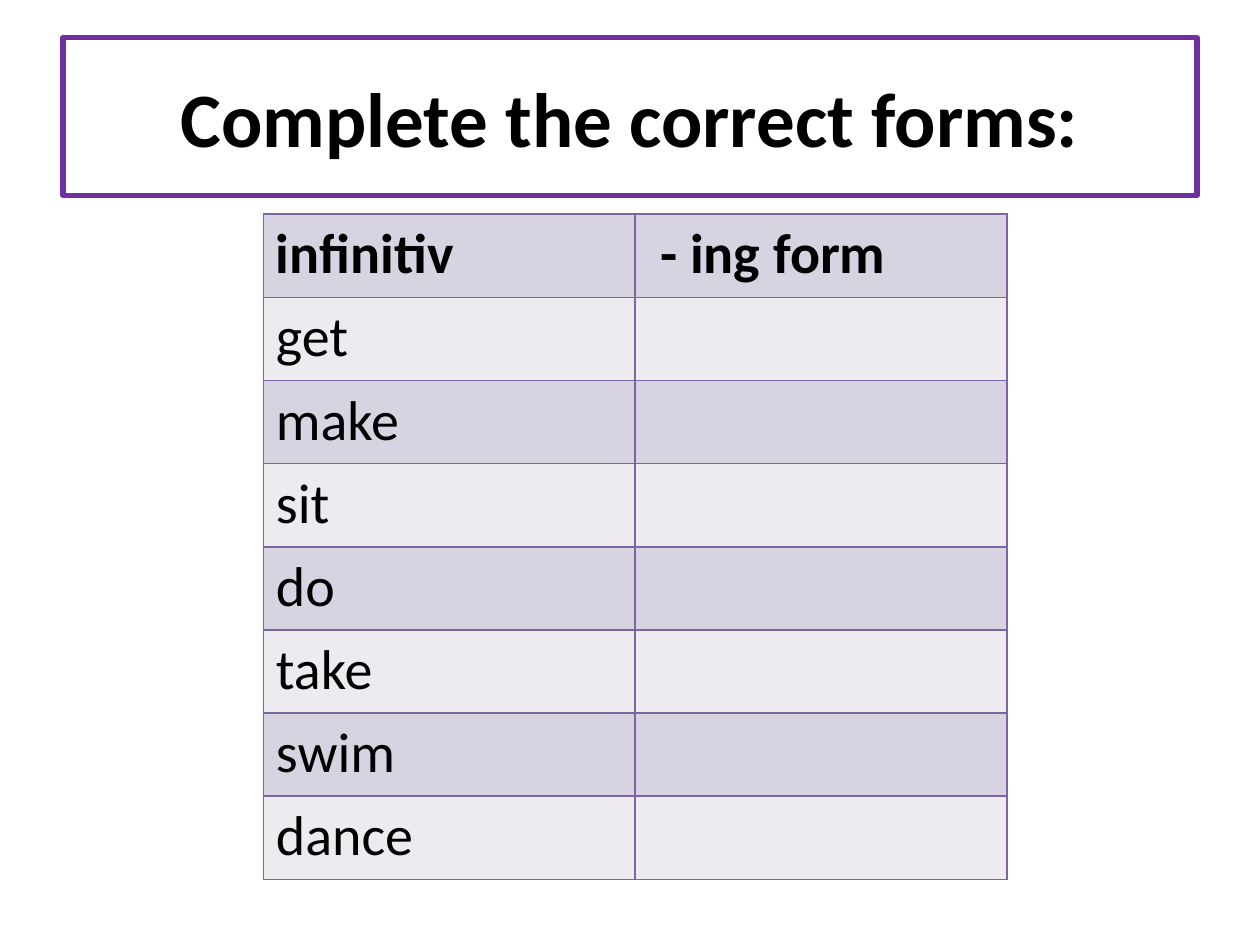
"""Build a worksheet slide with a framed title and a table of verb forms."""
import lxml.etree
import pptx
import pptx.dml.color
import pptx.enum.text
import pptx.oxml.ns
import pptx.util

Inches = pptx.util.Inches
Pt = pptx.util.Pt
RGBColor = pptx.dml.color.RGBColor

TITLE = "Complete the correct forms:"
HEADINGS = ("infinitiv", " - ing form")
VERBS = ("get", "make", "sit", "do", "take", "swim", "dance")

FONT = "Calibri"
BLACK = RGBColor(0x00, 0x00, 0x00)
WHITE = RGBColor(0xFF, 0xFF, 0xFF)
FRAME = RGBColor(0x70, 0x30, 0xA0)
BORDER = RGBColor(0x80, 0x64, 0xA2)
BANDS = (RGBColor(0xD8, 0xD3, 0xE0), RGBColor(0xED, 0xEA, 0xF0))

COLUMN_WIDTH = 2.95
ROW_HEIGHT = 0.66


def format_paragraph(paragraph, size, bold):
    font = paragraph.font
    font.name = FONT
    font.size = Pt(size)
    font.bold = bold
    font.color.rgb = BLACK


def add_borders(cell):
    qn = pptx.oxml.ns.qn
    properties = cell._tc.get_or_add_tcPr()
    for side in ("a:lnL", "a:lnR", "a:lnT", "a:lnB"):
        line = lxml.etree.SubElement(properties, qn(side), w=str(Pt(1)))
        fill = lxml.etree.SubElement(line, qn("a:solidFill"))
        lxml.etree.SubElement(fill, qn("a:srgbClr"), val=str(BORDER))


def add_title(slide):
    title = slide.shapes.title
    title.left, title.top = Inches(0.5), Inches(0.3)
    title.width, title.height = Inches(9), Inches(1.25)
    title.line.color.rgb = FRAME
    title.line.width = Pt(3)
    frame = title.text_frame
    frame.text = TITLE
    frame.vertical_anchor = pptx.enum.text.MSO_ANCHOR.MIDDLE
    paragraph = frame.paragraphs[0]
    paragraph.alignment = pptx.enum.text.PP_ALIGN.CENTER
    format_paragraph(paragraph, 44, True)


def add_verb_table(slide):
    rows = [HEADINGS] + [(verb, "") for verb in VERBS]
    table = slide.shapes.add_table(
        len(rows), len(HEADINGS), Inches(2.09), Inches(1.7),
        Inches(COLUMN_WIDTH * len(HEADINGS)), Inches(ROW_HEIGHT * len(rows)),
    ).table
    for column in table.columns:
        column.width = Inches(COLUMN_WIDTH)
    for row_index, texts in enumerate(rows):
        table.rows[row_index].height = Inches(ROW_HEIGHT)
        for column_index, text in enumerate(texts):
            cell = table.cell(row_index, column_index)
            cell.text = text
            format_paragraph(cell.text_frame.paragraphs[0], 32, row_index == 0)
            add_borders(cell)
            cell.fill.solid()
            cell.fill.fore_color.rgb = BANDS[row_index % 2]


def main():
    presentation = pptx.Presentation()
    presentation.slide_width = Inches(10)
    presentation.slide_height = Inches(7.5)
    slide = presentation.slides.add_slide(presentation.slide_layouts[5])
    slide.background.fill.solid()
    slide.background.fill.fore_color.rgb = WHITE
    add_title(slide)
    add_verb_table(slide)
    presentation.save("out.pptx")


if __name__ == "__main__":
    main()
